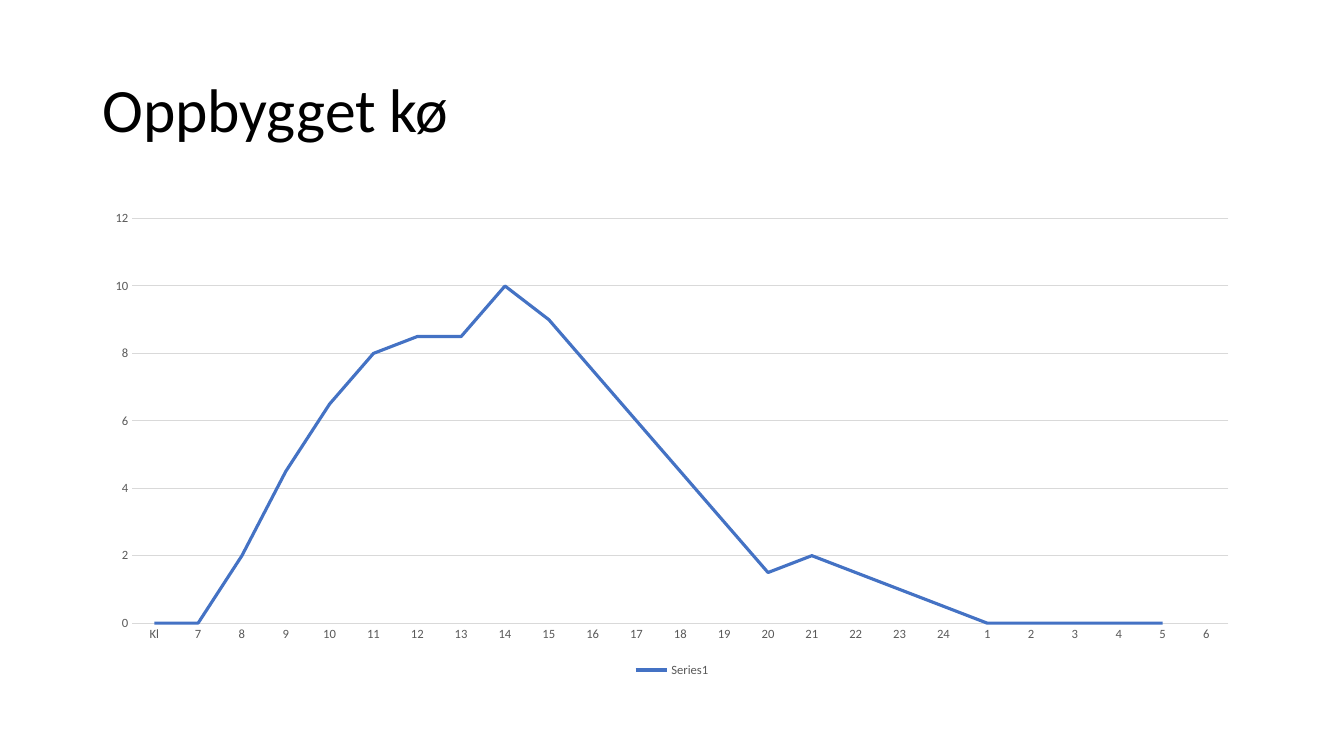
from pptx import Presentation
from pptx.chart.data import CategoryChartData
from pptx.dml.color import RGBColor
from pptx.enum.chart import XL_CHART_TYPE, XL_LEGEND_POSITION, XL_TICK_MARK
from pptx.enum.text import MSO_ANCHOR
from pptx.util import Pt

LINE = XL_CHART_TYPE.LINE
BOTTOM = XL_LEGEND_POSITION.BOTTOM
NO_TICK = XL_TICK_MARK.NONE
MIDDLE = MSO_ANCHOR.MIDDLE

PX = 9525  # EMU per px, 96 px to the inch
THEME = {
    "font": "Calibri",
    "title": RGBColor(0x00, 0x00, 0x00),
    "label": RGBColor(0x59, 0x59, 0x59),
    "grid": RGBColor(0xD9, 0xD9, 0xD9),
    "queue": RGBColor(0x44, 0x72, 0xC4),
    "title_size": Pt(44),
    "label_size": Pt(9),
    "grid_width": Pt(0.75),
    "queue_width": Pt(2.25),
}


def style(font, kind):
    font.name = THEME["font"]
    font.size = THEME[kind + "_size"]
    font.bold = False
    font.color.rgb = THEME[kind]


def stroke(line, kind):
    line.color.rgb = THEME[kind]
    line.width = THEME[kind + "_width"]


deck = Presentation()
deck.slide_width, deck.slide_height = 1280 * PX, 720 * PX
slide = deck.slides.add_slide(deck.slide_layouts[6])

# Title
box = slide.shapes.add_textbox(88 * PX, 38 * PX, 1104 * PX, 139 * PX)
frame = box.text_frame
frame.word_wrap = True
frame.vertical_anchor = MIDDLE
title = frame.paragraphs[0]
title.text = "Oppbygget kø"
title.line_spacing = 0.9
style(title.font, "title")

# Queue by hour, with no value yet for the last hour
hours = [*range(7, 25), *range(1, 7)]
queue = [0, 0, 2, 4.5, 6.5, 8, 8.5, 8.5, 10, 9, 7.5, 6, 4.5, 3,
         1.5, 2, 1.5, 1, 0.5, 0, 0, 0, 0, 0, None]
data = CategoryChartData()
data.categories = ["Kl"] + [str(hour) for hour in hours]
data.add_series("Series1", queue)
chart = slide.shapes.add_chart(
    LINE, 88 * PX, 192 * PX, 1104 * PX, 457 * PX, data).chart
chart.has_title = False
style(chart.font, "label")

# Line
curve = chart.plots[0].series[0]
curve.smooth = False
stroke(curve.format.line, "queue")

# Axes
hour_axis, size_axis = chart.category_axis, chart.value_axis
for axis in (hour_axis, size_axis):
    axis.major_tick_mark = NO_TICK
    axis.minor_tick_mark = NO_TICK
    style(axis.tick_labels.font, "label")
stroke(hour_axis.format.line, "grid")
size_axis.format.line.fill.background()
size_axis.minimum_scale, size_axis.maximum_scale = 0, 12
size_axis.major_unit = 2
size_axis.has_major_gridlines = True
stroke(size_axis.major_gridlines.format.line, "grid")

# Legend
chart.has_legend = True
chart.legend.position = BOTTOM
chart.legend.include_in_layout = False
style(chart.legend.font, "label")

deck.save("out.pptx")
